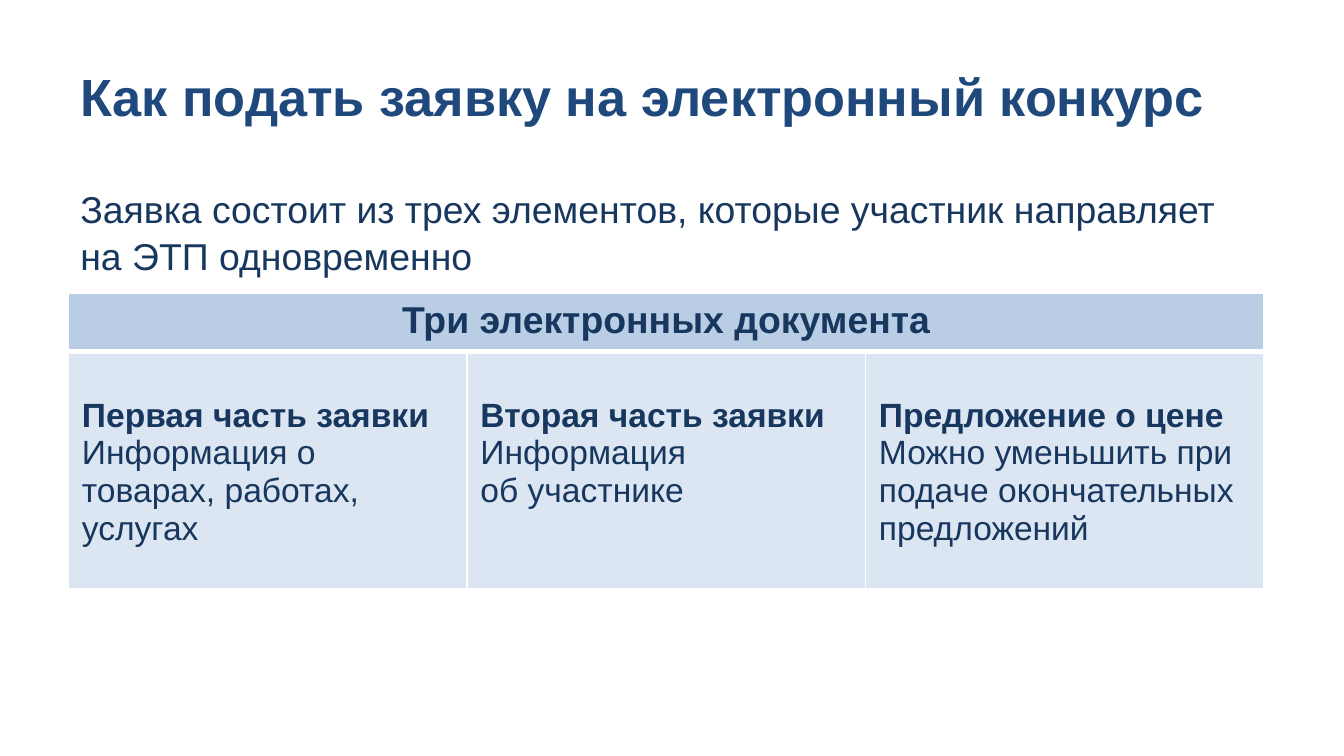
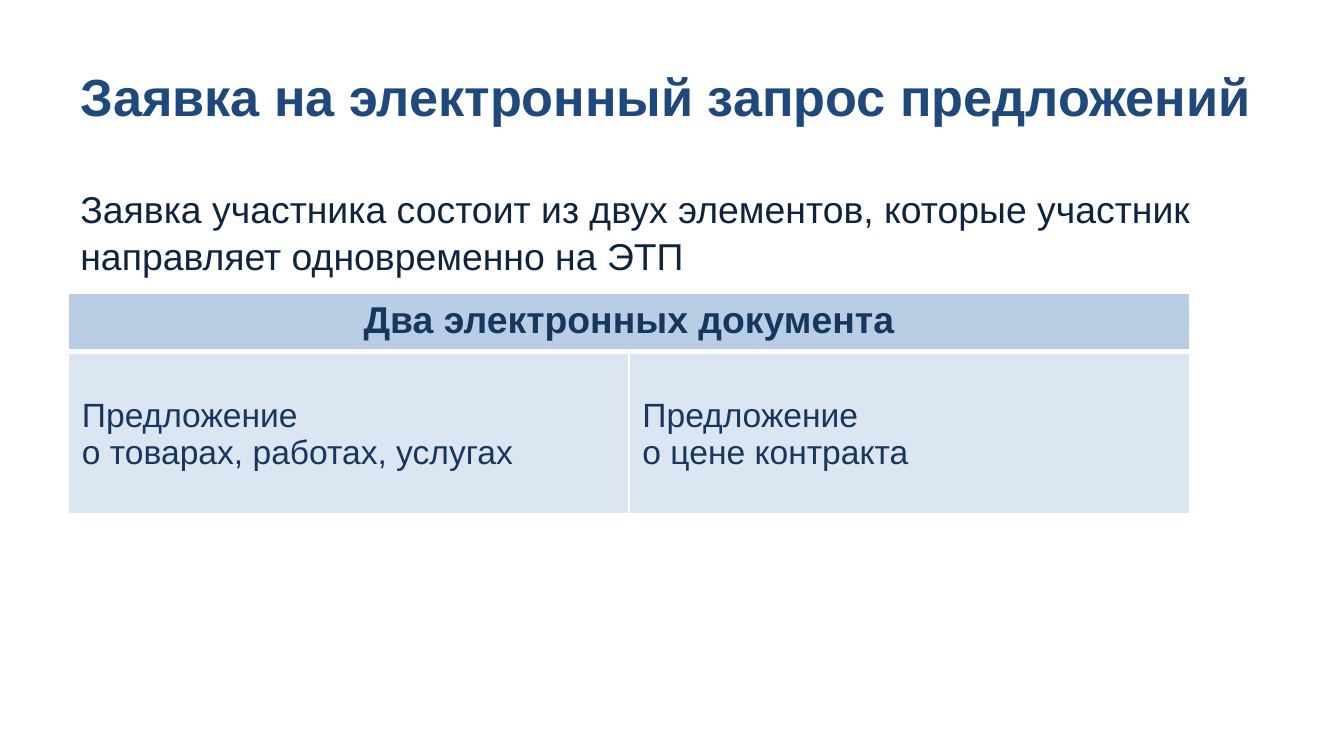
from lxml.etree import SubElement
from pptx import Presentation
from pptx.dml.color import RGBColor
from pptx.enum.text import MSO_ANCHOR, PP_ALIGN
from pptx.oxml.ns import qn
from pptx.util import Pt

FONT = "Arial"
HEX = {
    "title": "1F497D",
    "text": "17375E",
    "dark": "0F243E",
    "head": "B9CDE5",
    "cell": "DCE6F2",
    "line": "FFFFFF",
}
LEFT, WIDTH = 36, 648
GRID_LEFT, GRID_TOP = 36.7, 157
HEAD_H = 30.2


def color(name):
    return RGBColor.from_string(HEX[name])


def add_run(para, text, size, tint, bold=False):
    run = para.add_run()
    run.text = text
    font = run.font
    font.name, font.size, font.bold = FONT, Pt(size), bold
    font.color.rgb = color(tint)


def add_text(slide, top, height, text, size, tint, bold=False,
             anchor=MSO_ANCHOR.TOP, spacing=1.0):
    box = slide.shapes.add_textbox(Pt(LEFT), Pt(top), Pt(WIDTH), Pt(height))
    frame = box.text_frame
    frame.word_wrap = True
    frame.vertical_anchor = anchor
    para = frame.paragraphs[0]
    para.line_spacing = spacing
    add_run(para, text, size, tint, bold)


def add_title(slide, text):
    add_text(slide, 17.5, 67.5, text, 28, "title", True, MSO_ANCHOR.MIDDLE)


def add_lead(slide, text, tint):
    add_text(slide, 95, 267, text, 20, tint, spacing=1.05)


def set_edges(cell, low=1, high=1):
    """Draw white borders; low and high are the bottom and top widths."""
    props = cell._tc.get_or_add_tcPr()
    edges = {"lnL": 1, "lnR": 1, "lnT": high, "lnB": low}
    for spot, (tag, width) in enumerate(edges.items()):
        line = SubElement(props, qn(f"a:{tag}"), w=str(Pt(width)))
        fill = SubElement(line, qn("a:solidFill"))
        SubElement(fill, qn("a:srgbClr"), val=HEX["line"])
        props.insert(spot, line)


def paint(cell, tint):
    cell.fill.solid()
    cell.fill.fore_color.rgb = color(tint)


def fill_cell(cell, lines):
    """Write (text, bold) lines, one paragraph each."""
    cell.margin_top = Pt(24.3)
    frame = cell.text_frame
    for spot, (text, bold) in enumerate(lines):
        para = frame.add_paragraph() if spot else frame.paragraphs[0]
        add_run(para, text, 18, "text", bold)


def add_grid(slide, head, parts, col_w, body_h):
    count = len(parts)
    frame = slide.shapes.add_table(
        2, count, Pt(GRID_LEFT), Pt(GRID_TOP),
        Pt(col_w * count), Pt(HEAD_H + body_h))
    table = frame.table
    table.horz_banding = False
    for row, height in zip(table.rows, (HEAD_H, body_h)):
        row.height = Pt(height)
    for col, lines in enumerate(parts):
        table.columns[col].width = Pt(col_w)
        top, low = table.cell(0, col), table.cell(1, col)
        paint(top, "head")
        set_edges(top, low=3)
        paint(low, "cell")
        set_edges(low, high=3)
        fill_cell(low, lines)
    first = table.cell(0, 0)
    first.merge(table.cell(0, count - 1))
    para = first.text_frame.paragraphs[0]
    para.alignment = PP_ALIGN.CENTER
    add_run(para, head, 20, "text", True)


def add_slide(deck, title, lead, tint):
    slide = deck.slides.add_slide(deck.slide_layouts[6])
    add_title(slide, title)
    add_lead(slide, lead, tint)
    return slide


def main():
    deck = Presentation()
    deck.slide_width, deck.slide_height = Pt(720), Pt(405)

    slide = add_slide(
        deck, "Как подать заявку на электронный конкурс",
        "Заявка состоит из трех элементов, которые участник "
        "направляет на ЭТП одновременно", "text")
    add_grid(slide, "Три электронных документа", [
        [("Первая часть заявки", True),
         ("Информация о товарах, работах, услугах", False)],
        [("Вторая часть заявки", True),
         ("Информация", False), ("об участнике", False)],
        [("Предложение о цене", True),
         ("Можно уменьшить при подаче окончательных предложений", False)],
    ], 213.5, 127.3)

    slide = add_slide(
        deck, "Заявка на электронный запрос предложений",
        "Заявка участника состоит из двух элементов, которые участник "
        "направляет одновременно на ЭТП", "dark")
    add_grid(slide, "Два электронных документа", [
        [("Предложение", False), ("о товарах, работах, услугах", False)],
        [("Предложение", False), ("о цене контракта", False)],
    ], 300.3, 87)

    deck.save("out.pptx")


if __name__ == "__main__":
    main()
